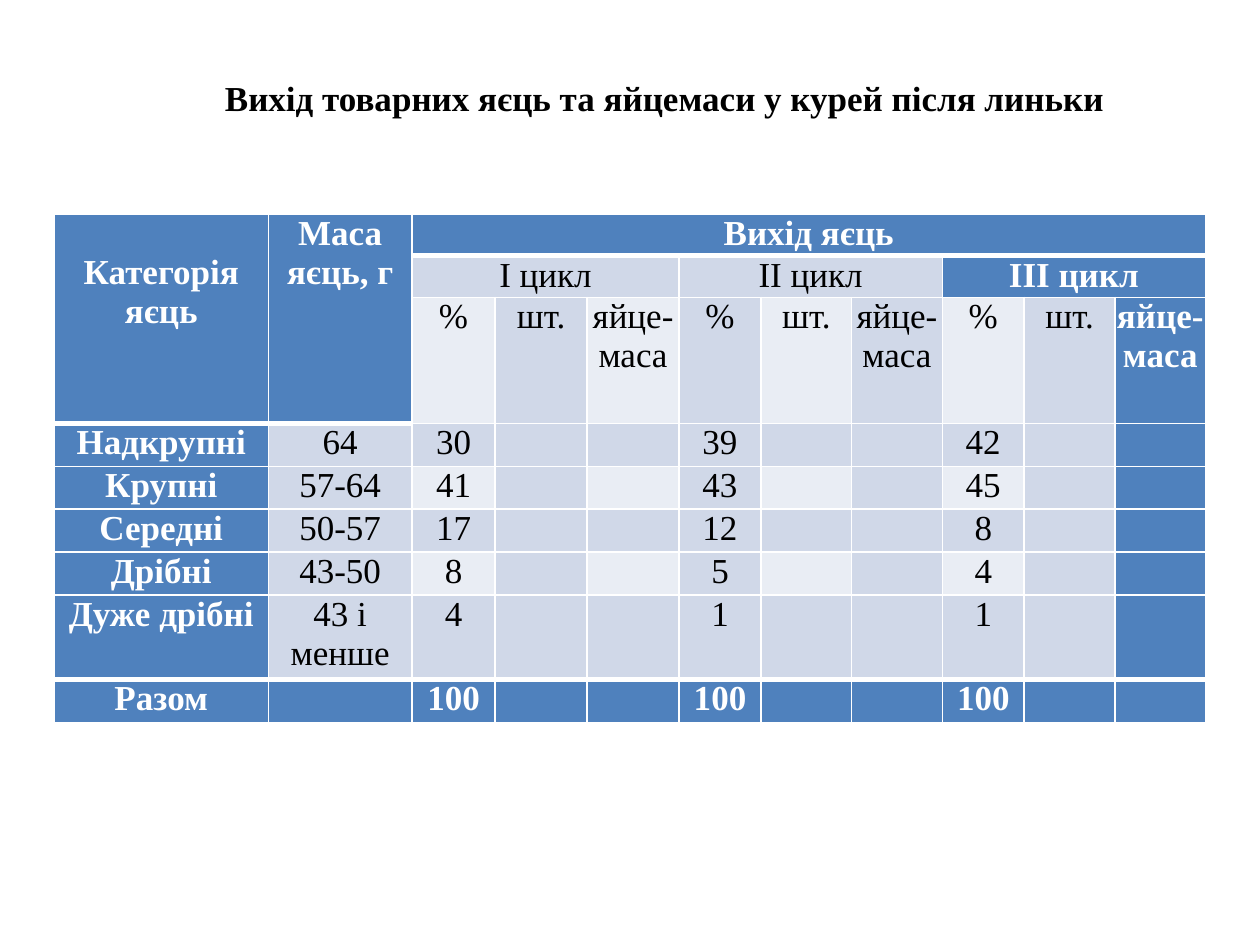
import pptx
import pptx.dml.color
import pptx.enum.text
import pptx.oxml
import pptx.oxml.ns
import pptx.util
from pptx.util import Inches

RGB = pptx.dml.color.RGBColor
WHITE = RGB(0xFF, 0xFF, 0xFF)
BLACK = RGB(0, 0, 0)
BLUE = RGB(0x4F, 0x81, 0xBD)
BAND = RGB(0xD0, 0xD8, 0xE8)
PALE = RGB(0xE9, 0xED, 0xF4)

COLS = [1.7, 1.14, 0.66, 0.73, 0.73] + [0.65, 0.72, 0.72] * 2
ROWS = [0.33, 0.33, 1.0] + [0.33] * 4 + [0.67, 0.33]
LAST_ROW, LAST_COL = len(ROWS) - 1, len(COLS) - 1
CYCLES = {2: "І цикл", 5: "ІІ цикл", 8: "ІІІ цикл"}
UNITS = ["%", "шт.", "яйце-\nмаса"]

# Category, egg mass, share in each of the three cycles
DATA = [
    ("Надкрупні", "64", 30, 39, 42),
    ("Крупні", "57-64", 41, 43, 45),
    ("Середні", "50-57", 17, 12, 8),
    ("Дрібні", "43-50", 8, 5, 4),
    ("Дуже дрібні", "43 і менше", 4, 1, 1),
    ("Разом", "", 100, 100, 100),
]


def write(frame, text, color=BLACK, bold=False, size=20):
    for i, line in enumerate(text.split("\n")):
        para = frame.add_paragraph() if i else frame.paragraphs[0]
        para.alignment = pptx.enum.text.PP_ALIGN.CENTER
        para.font.size = pptx.util.Pt(size)
        if not line:
            continue
        run = para.add_run()
        run.text = line
        font = run.font
        font.name = "Times New Roman"
        font.size = pptx.util.Pt(size)
        font.bold = bold
        font.color.rgb = color


def shade(row, col):
    if row in (0, LAST_ROW) or col in (0, LAST_COL):
        return BLUE
    if row == 1:
        return BLUE if col >= 8 else BAND
    return PALE if row % 2 == 0 and col % 2 == 0 else BAND


def weight(edge, col):
    """Width in points of the rule above row number edge."""
    heavy = edge in (1, LAST_ROW) or (edge == 3 and col < 2)
    return 3 if heavy else 1


def border(cell, row, col):
    props = cell._tc.get_or_add_tcPr()
    sides = {"L": 1, "R": 1, "T": weight(row, col), "B": weight(row + 1, col)}
    for side, width in sides.items():
        props.append(pptx.oxml.parse_xml(
            f'<a:ln{side} {pptx.oxml.ns.nsdecls("a")} w="{width * 12700}">'
            f'<a:solidFill><a:srgbClr val="{WHITE}"/></a:solidFill>'
            f'</a:ln{side}>'))


def labels():
    """Texts of the table by row and column."""
    found = {(0, 0): "Категорія яєць", (0, 1): "Маса яєць, г",
             (0, 2): "Вихід яєць"}
    for col, name in CYCLES.items():
        found[1, col] = name
        for i, unit in enumerate(UNITS):
            found[2, col + i] = unit
    for row, (kind, mass, *shares) in enumerate(DATA, 3):
        found[row, 0], found[row, 1] = kind, mass
        for col, share in zip(CYCLES, shares):
            found[row, col] = str(share)
    return found


def add_grid(slide):
    frame = slide.shapes.add_table(
        len(ROWS), len(COLS), Inches(0.43), Inches(1.7),
        Inches(sum(COLS)), Inches(sum(ROWS)))
    table = frame.table
    table.first_row = table.horz_banding = False
    for item, width in zip(table.columns, COLS):
        item.width = Inches(width)
    for item, height in zip(table.rows, ROWS):
        item.height = Inches(height)

    # Merged headings
    for col in (0, 1):
        table.cell(0, col).merge(table.cell(2, col))
    table.cell(0, 2).merge(table.cell(0, LAST_COL))
    for col in CYCLES:
        table.cell(1, col).merge(table.cell(1, col + 2))

    # Cell format and text
    texts = labels()
    for row in range(len(ROWS)):
        for col in range(len(COLS)):
            cell = table.cell(row, col)
            cell.margin_left = cell.margin_right = 0
            cell.margin_top = cell.margin_bottom = 0
            border(cell, row, col)
            fill = shade(row, col)
            cell.fill.solid()
            cell.fill.fore_color.rgb = fill
            blue = fill == BLUE
            write(cell.text_frame, texts.get((row, col), ""),
                  color=WHITE if blue else BLACK, bold=blue)
    # Category heading sits one line lower
    table.cell(0, 0).margin_top = Inches(0.31)


def add_title(slide):
    box = slide.shapes.add_textbox(
        Inches(1.66), Inches(0.55), Inches(7.23), Inches(0.44))
    frame = box.text_frame
    frame.word_wrap = False
    frame.auto_size = pptx.enum.text.MSO_AUTO_SIZE.SHAPE_TO_FIT_TEXT
    frame.vertical_anchor = pptx.enum.text.MSO_ANCHOR.MIDDLE
    write(frame, "Вихід товарних яєць та яйцемаси у курей після линьки",
          bold=True)


def main():
    deck = pptx.Presentation()
    deck.slide_width, deck.slide_height = Inches(10), Inches(7.5)
    slide = deck.slides.add_slide(deck.slide_layouts[6])
    add_grid(slide)
    add_title(slide)
    deck.save("out.pptx")


if __name__ == "__main__":
    main()
